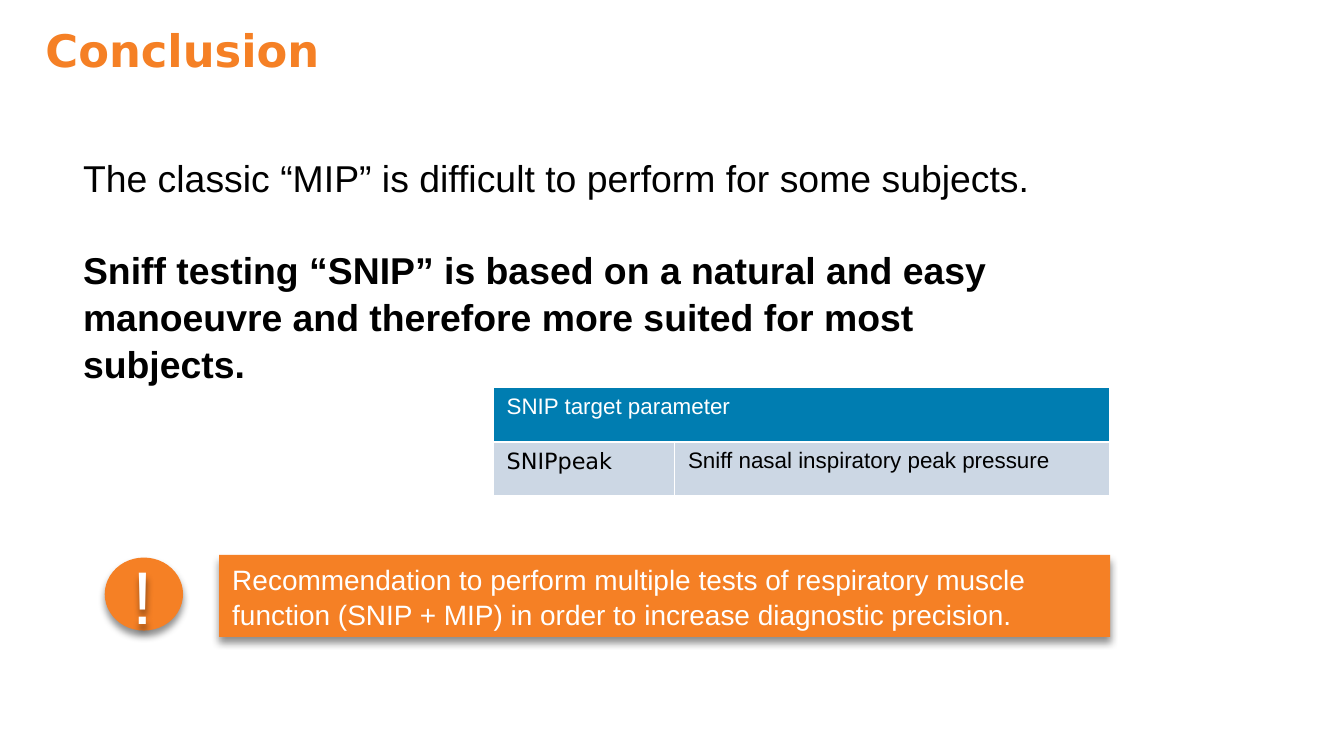
import pptx
import pptx.dml.color
import pptx.enum.shapes
import pptx.enum.text
import pptx.oxml
import pptx.util
from pptx.util import Cm

ORANGE = pptx.dml.color.RGBColor(0xF5, 0x80, 0x25)
BLUE = pptx.dml.color.RGBColor(0x00, 0x7D, 0xB1)
PALE_BLUE = pptx.dml.color.RGBColor(0xCC, 0xD7, 0xE4)
BLACK = pptx.dml.color.RGBColor(0, 0, 0)
WHITE = pptx.dml.color.RGBColor(0xFF, 0xFF, 0xFF)

SHADOW = """<a:effectLst xmlns:a="http://schemas.openxmlformats.org/drawingml/2006/main">
  <a:outerShdw blurRad="50800" dist="38100" dir="5400000" rotWithShape="0">
    <a:srgbClr val="000000"><a:alpha val="43000"/></a:srgbClr>
  </a:outerShdw>
</a:effectLst>"""


def write(frame, *texts, size, color, font="Arial", bold=False, spacing=None, gap=0):
    """Fill a text frame, one paragraph per text; only the last can be bold."""
    frame.word_wrap = True
    for number, text in enumerate(texts):
        paragraph = frame.add_paragraph() if number else frame.paragraphs[0]
        paragraph.alignment = pptx.enum.text.PP_ALIGN.LEFT
        paragraph.line_spacing = spacing
        if number:
            paragraph.space_before = pptx.util.Pt(gap)
        run = paragraph.add_run()
        run.text = text
        run.font.size = pptx.util.Pt(size)
        run.font.name = font
        run.font.color.rgb = color
        run.font.bold = bold and number == len(texts) - 1


def add_orange(shapes, kind, left, top, width, height):
    """Add an orange shape with a soft shadow below it."""
    shape = shapes.add_shape(kind, Cm(left), Cm(top), Cm(width), Cm(height))
    shape.fill.solid()
    shape.fill.fore_color.rgb = ORANGE
    shape.line.fill.background()
    shape._element.spPr.append(pptx.oxml.parse_xml(SHADOW))
    return shape


presentation = pptx.Presentation()
presentation.slide_width = Cm(25.4)
presentation.slide_height = Cm(14.29)
slide = presentation.slides.add_slide(presentation.slide_layouts[6])

# Title
title = slide.shapes.add_textbox(Cm(0.61), Cm(0.3), Cm(22.86), Cm(2.13))
write(title.text_frame, "Conclusion", size=24, color=ORANGE, font="DejaVu Sans", bold=True)

# Main statements
statements = slide.shapes.add_textbox(Cm(1.32), Cm(2.77), Cm(19.3), Cm(4.52))
write(
    statements.text_frame,
    "The classic “MIP” is difficult to perform for some subjects.",
    "Sniff testing “SNIP” is based on a natural and easy manoeuvre "
    "and therefore more suited for most subjects.",
    size=20, color=BLACK, bold=True, spacing=1.05, gap=24,
)

# Target parameter table; its default style draws the white borders
parameters = slide.shapes.add_table(2, 2, Cm(9.32), Cm(7.32), Cm(11.66), Cm(2.06)).table
parameters.columns[0].width = Cm(3.43)
parameters.columns[1].width = Cm(8.23)
parameters.cell(0, 0).merge(parameters.cell(0, 1))
for row, column, text, font, color, fill in (
    (0, 0, "SNIP target parameter", "Arial", WHITE, BLUE),
    (1, 0, "SNIPpeak", "DejaVu Sans", BLACK, PALE_BLUE),
    (1, 1, "Sniff nasal inspiratory peak pressure", "Arial", BLACK, PALE_BLUE),
):
    cell = parameters.cell(row, column)
    cell.fill.solid()
    cell.fill.fore_color.rgb = fill
    write(cell.text_frame, text, size=12, color=color, font=font)

# Recommendation
recommendation = add_orange(
    slide.shapes, pptx.enum.shapes.MSO_SHAPE.RECTANGLE, 4.14, 10.49, 16.84, 1.55
)
recommendation.text_frame.vertical_anchor = pptx.enum.text.MSO_ANCHOR.MIDDLE
write(
    recommendation.text_frame,
    "Recommendation to perform multiple tests of respiratory muscle "
    "function (SNIP + MIP) in order to increase diagnostic precision.",
    size=15, color=WHITE, spacing=1.05,
)

# Attention sign
attention = slide.shapes.add_group_shape()
add_orange(attention.shapes, pptx.enum.shapes.MSO_SHAPE.OVAL, 1.98, 10.54, 1.48, 1.38)
exclamation = attention.shapes.add_textbox(Cm(2.26), Cm(10.19), Cm(0.94), Cm(1.96))
exclamation._element.spPr.append(pptx.oxml.parse_xml(SHADOW))
write(exclamation.text_frame, "!", size=40, color=WHITE, spacing=1.05)

presentation.save("out.pptx")
